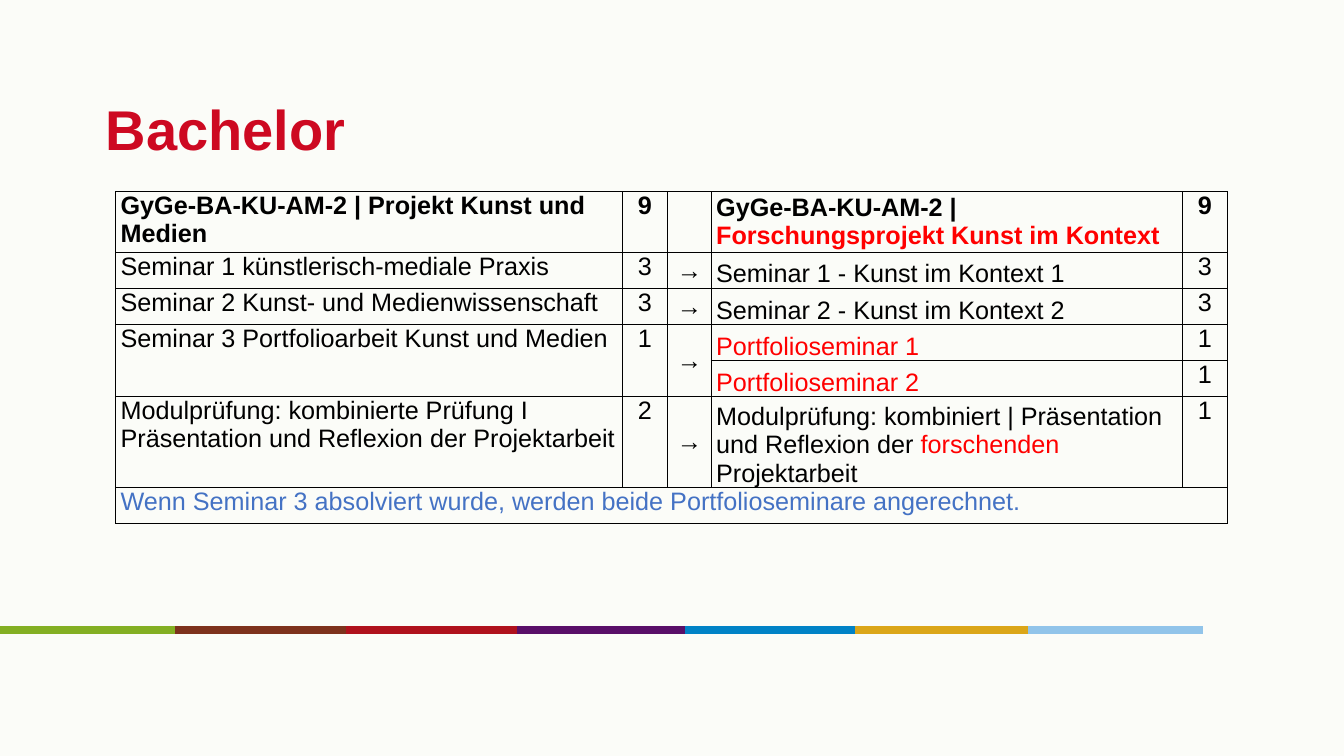
import pptx
import pptx.util
import pptx.dml.color
import pptx.enum.shapes
import pptx.enum.text
import pptx.oxml
import pptx.oxml.ns
from dataclasses import dataclass

Cm = pptx.util.Cm
Pt = pptx.util.Pt
ALIGN = pptx.enum.text.PP_ALIGN
ANCHOR = pptx.enum.text.MSO_ANCHOR


@dataclass(frozen=True)
class Theme:
    font: str = "Arial"
    title_size: int = 40
    body_size: int = 18
    background: str = "FBFCF8"
    title: str = "CD0921"
    text: str = "000000"
    changed: str = "FF0000"
    note: str = "4472C4"
    stripe: tuple = ("83AF23", "7D321D", "AF111D", "590F68", "0082C6", "DBA619", "91C4EA")


THEME = Theme()


def rgb(colour):
    return pptx.dml.color.RGBColor.from_string(colour)


def write(frame, runs, size=THEME.body_size, bold=False, align=ALIGN.LEFT):
    """Fill the first paragraph with (text, colour) runs."""
    paragraph = frame.paragraphs[0]
    paragraph.alignment = align
    for text, colour in runs:
        run = paragraph.add_run()
        run.text = text
        run.font.name = THEME.font
        run.font.size = Pt(size)
        run.font.bold = bold
        run.font.color.rgb = rgb(colour)


class SlideBuilder:
    def __init__(self, slide, theme):
        self.slide = slide
        self.theme = theme
        slide.background.fill.solid()
        slide.background.fill.fore_color.rgb = rgb(theme.background)

    def title(self, text, left, top, width, height):
        frame = self.slide.shapes.add_textbox(Cm(left), Cm(top), Cm(width), Cm(height)).text_frame
        frame.word_wrap = True
        frame.vertical_anchor = ANCHOR.MIDDLE
        frame.margin_left = frame.margin_right = Cm(0.13)
        frame.margin_top = frame.margin_bottom = Cm(0.13)
        write(frame, [(text, self.theme.title)], size=self.theme.title_size, bold=True)

    def line(self, start, end, y, colour, width):
        line = self.slide.shapes.add_connector(
            pptx.enum.shapes.MSO_CONNECTOR.STRAIGHT, Cm(start), Cm(y), Cm(end), Cm(y))
        line.line.color.rgb = rgb(colour)
        line.line.width = Pt(width)
        line._element.spPr.append(pptx.oxml.parse_xml(
            f"<a:effectLst {pptx.oxml.ns.nsdecls('a')}/>"))

    def table(self, left, top, widths, heights):
        table = self.slide.shapes.add_table(
            len(heights), len(widths), Cm(left), Cm(top), Cm(sum(widths)), Cm(sum(heights))).table
        table.first_row = table.horz_banding = False
        for column, width in zip(table.columns, widths):
            column.width = Cm(width)
        for row, height in zip(table.rows, heights):
            row.height = Cm(height)
            for cell in row.cells:
                self.style_cell(cell)
        return table

    def style_cell(self, cell):
        cell.margin_left = cell.margin_right = Cm(0.12)
        cell.margin_top = cell.margin_bottom = 0
        cell.fill.background()
        properties = cell._tc.get_or_add_tcPr()
        for index, side in enumerate("LRTB"):
            properties.insert(index, pptx.oxml.parse_xml(
                f'<a:ln{side} {pptx.oxml.ns.nsdecls("a")} w="{Pt(1)}"><a:solidFill>'
                f'<a:srgbClr val="{self.theme.text}"/></a:solidFill></a:ln{side}>'))

    def cell(self, cell, runs, anchor=ANCHOR.TOP, **text_format):
        cell.vertical_anchor = anchor
        write(cell.text_frame, runs, **text_format)


def main():
    deck = pptx.Presentation()
    deck.slide_width, deck.slide_height = Cm(33.87), Cm(19.05)
    page = SlideBuilder(deck.slides.add_slide(deck.slide_layouts[6]), THEME)
    black, red = THEME.text, THEME.changed

    # Coloured stripe
    stripe_starts = (0, 4.42, 8.71, 13.03, 17.27, 21.54, 25.91)
    for start, colour in zip(stripe_starts, THEME.stripe):
        page.line(start, start + 4.4, 15.87, colour, 5.5)

    page.title("Bachelor", 2.54, 1.65, 28.78, 3.18)

    # Module comparison: old module, points, arrow, new module, points
    modules = [
        ("GyGe-BA-KU-AM-2 | Projekt Kunst und Medien", "9", "",
         [("GyGe-BA-KU-AM-2 | ", black), ("Forschungsprojekt Kunst im Kontext", red)], "9"),
        ("Seminar 1 künstlerisch-mediale Praxis", "3", "→",
         [("Seminar 1 - Kunst im Kontext 1", black)], "3"),
        ("Seminar 2 Kunst- und Medienwissenschaft", "3", "→",
         [("Seminar 2 - Kunst im Kontext 2", black)], "3"),
        ("Seminar 3 Portfolioarbeit Kunst und Medien", "1", "→",
         [("Portfolioseminar 1", red)], "1"),
        ("", "", "", [("Portfolioseminar 2", red)], "1"),
        ("Modulprüfung: kombinierte Prüfung I Präsentation und Reflexion der Projektarbeit",
         "2", "→",
         [("Modulprüfung: kombiniert | Präsentation und Reflexion der ", black),
          ("forschenden", red), (" Projektarbeit", black)], "1"),
    ]
    comparison = page.table(2.92, 4.83, (12.77, 1.13, 1.11, 11.87, 1.13),
                            (1.42, 0.91, 0.91, 0.91, 0.91, 2.13, 0.91))
    for column in range(3):
        comparison.cell(3, column).merge(comparison.cell(4, column))
    comparison.cell(6, 0).merge(comparison.cell(6, 4))

    for row, module in enumerate(modules):
        header = row == 0
        for column, content in enumerate(module):
            if not content:
                continue
            runs = [(content, black)] if isinstance(content, str) else content
            new_anchor = ANCHOR.MIDDLE if header else ANCHOR.BOTTOM
            page.cell(comparison.cell(row, column), runs, bold=header,
                      anchor={2: ANCHOR.MIDDLE, 3: new_anchor}.get(column, ANCHOR.TOP),
                      align=ALIGN.LEFT if column in (0, 3) else ALIGN.CENTER)

    # Closing note across the table
    page.cell(comparison.cell(6, 0), [(
        "Wenn Seminar 3 absolviert wurde, werden beide Portfolioseminare angerechnet.",
        THEME.note)])

    deck.save("out.pptx")


if __name__ == "__main__":
    main()
